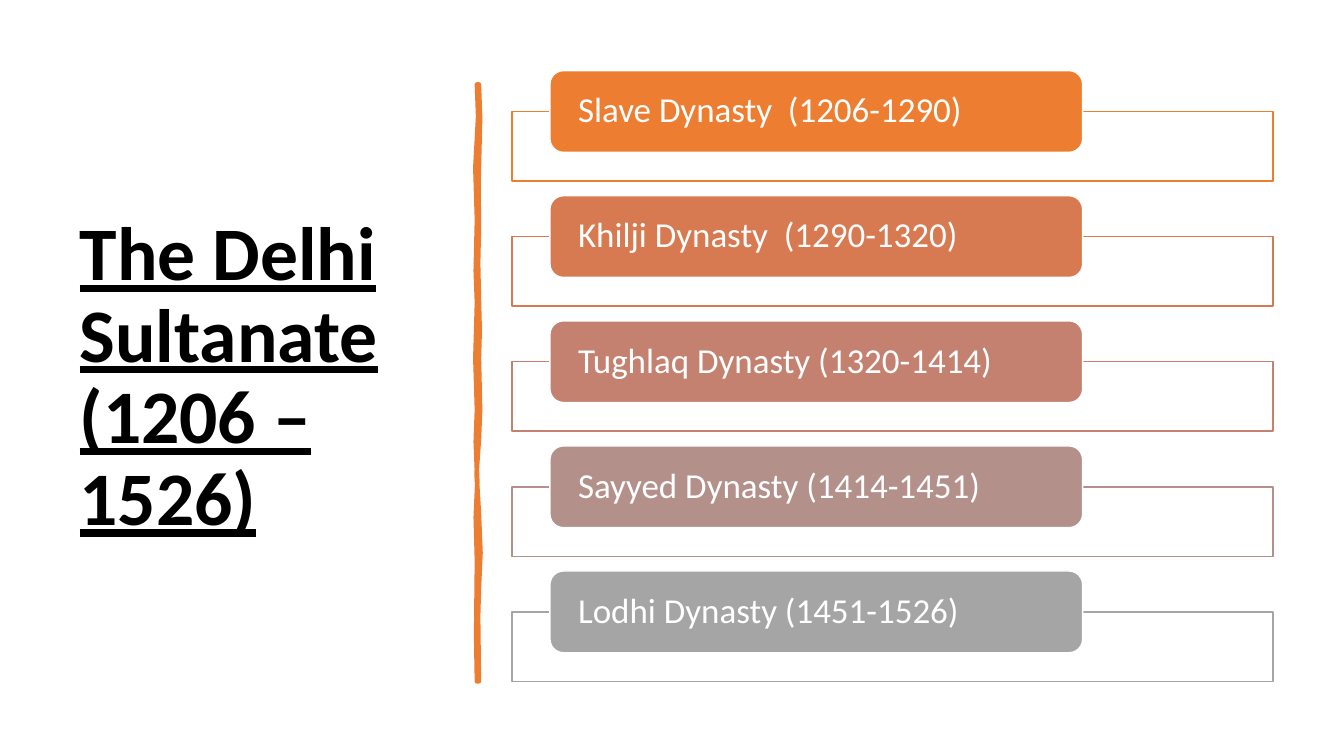
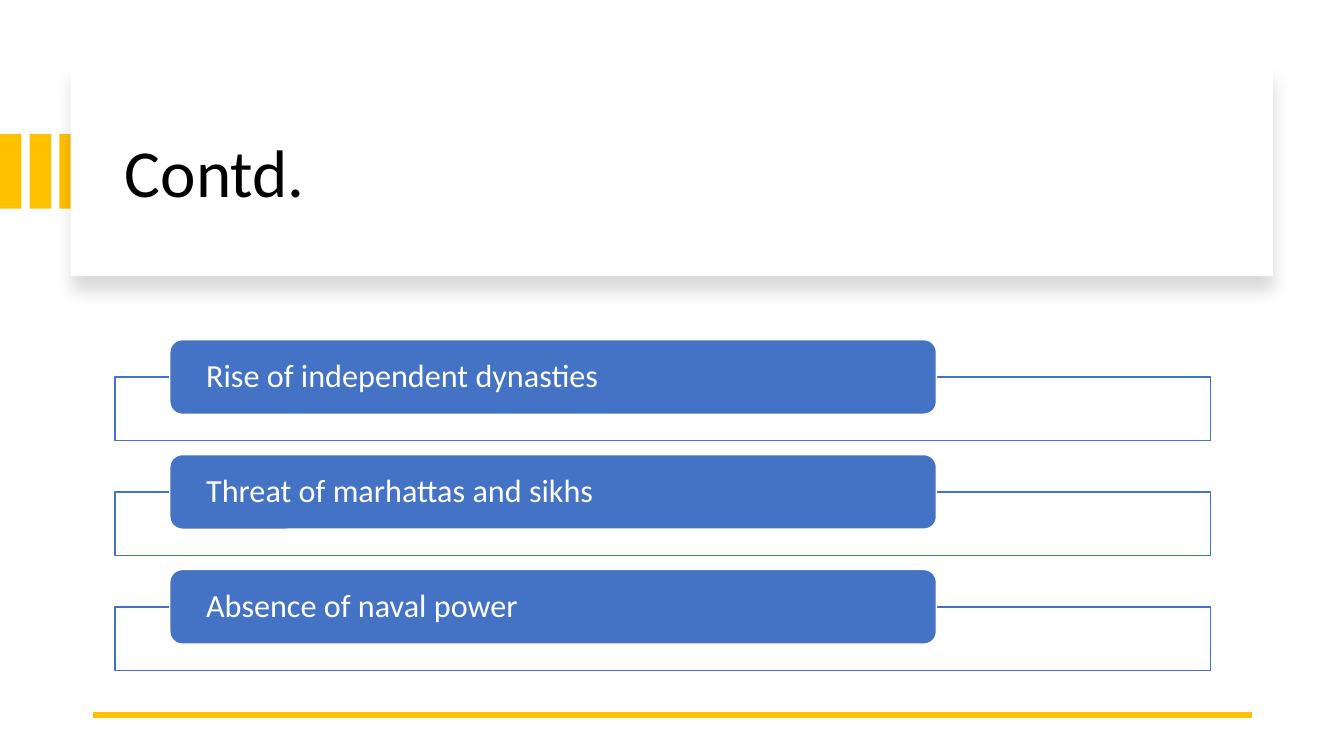
from dataclasses import dataclass

from lxml import etree
from pptx import Presentation
from pptx import util as u
from pptx.dml.color import RGBColor
from pptx.enum import shapes, text
from pptx.oxml import ns


@dataclass(frozen=True)
class Theme:
    font: str = "Calibri"
    ink: str = "000000"
    paper: str = "FFFFFF"
    orange: str = "ED7D31"
    gold: str = "FFC000"
    blue: str = "4472C4"
    dynasty_colours: tuple = ("ED7D31", "D87A51", "C48170", "B4908B", "A5A5A5")
    side_title: int = 54
    card_title: int = 48
    dynasty_label: int = 25
    cause_label: int = 23
    hairline: float = 1
    brush_line: float = 3.25
    rule_line: float = 4.5
    line_spacing: float = 0.9


THEME = Theme()

DYNASTIES = (
    "Slave Dynasty  (1206-1290)",
    "Khilji Dynasty  (1290-1320)",
    "Tughlaq Dynasty (1320-1414)",
    "Sayyed Dynasty (1414-1451)",
    "Lodhi Dynasty (1451-1526)",
)
CAUSES = (
    "Rise of independent dynasties",
    "Threat of marhattas and sikhs",
    "Absence of naval power",
)

BRUSH_RIGHT = (
    (0.13, 0), (0.16, 0.85), (0.12, 2.5), (0.13, 3.6), (0.11, 4.5), (0.13, 5.4),
    (0.15, 6.2), (0.13, 6.9), (0.16, 8.2), (0.13, 8.95), (0.07, 9.8), (0.13, 10.8),
    (0.17, 11.8), (0.13, 12.7), (0.11, 13.4), (0.13, 15.04),
)
BRUSH_LEFT = (
    (0.08, 15.04), (0.06, 13.9), (0.08, 12), (0.05, 10.9), (0.09, 10), (0.05, 9),
    (0.08, 8.2), (0.04, 6.9), (0.08, 5.5), (0.05, 4.7), (0.08, 3.4), (0.04, 2.1),
    (0.11, 0.8), (0.08, 0),
)


def paint(shape, fill, line=None, weight=THEME.hairline):
    shape.shadow.inherit = False
    shape.fill.solid()
    shape.fill.fore_color.rgb = RGBColor.from_string(fill)
    if line:
        shape.line.color.rgb = RGBColor.from_string(line)
        shape.line.width = u.Pt(weight)
    else:
        shape.line.fill.background()


def add_block(slide, box, fill, line=None, kind=shapes.MSO_SHAPE.RECTANGLE):
    block = slide.shapes.add_shape(kind, *map(u.Cm, box))
    paint(block, fill, line)
    return block


def write(shape, words, size, colour=THEME.ink, bold=False, underline=False,
          inset_x=0.25, inset_y=0.13):
    frame = shape.text_frame
    frame.word_wrap = True
    frame.vertical_anchor = text.MSO_ANCHOR.MIDDLE
    frame.margin_left = frame.margin_right = u.Cm(inset_x)
    frame.margin_top = frame.margin_bottom = u.Cm(inset_y)
    paragraph = frame.paragraphs[0]
    paragraph.alignment = text.PP_ALIGN.LEFT
    paragraph.line_spacing = THEME.line_spacing
    run = paragraph.add_run()
    run.text = words
    run.font.name = THEME.font
    run.font.size = u.Pt(size)
    run.font.bold = bold
    run.font.underline = underline
    run.font.color.rgb = RGBColor.from_string(colour)


def add_title(slide, box, words, size, **style):
    write(slide.shapes.add_textbox(*map(u.Cm, box)), words, size, **style)


def add_label_list(slide, box, labels, colours, size, label_height):
    left, top, width, height = box
    frame_height = 0.85 * label_height
    row_height = label_height / 2 + frame_height
    pitch = (height - row_height) / (len(labels) - 1)
    for index, (label, colour) in enumerate(zip(labels, colours)):
        row_top = top + index * pitch
        add_block(slide, (left, row_top + label_height / 2, width, frame_height),
                  THEME.paper, colour)
        tab = add_block(slide,
                        (left + 0.05 * width, row_top, 0.7 * width, label_height),
                        colour, THEME.paper, shapes.MSO_SHAPE.ROUNDED_RECTANGLE)
        write(tab, label, size, colour=THEME.paper,
              inset_x=0.0265 * width + 0.05 * label_height, inset_y=0)


def add_brush_stroke(slide, left, top):
    outline = [(u.Cm(left + x), u.Cm(top + y)) for x, y in BRUSH_RIGHT + BRUSH_LEFT]
    builder = slide.shapes.build_freeform(*outline[0])
    builder.add_line_segments(outline[1:], close=True)
    stroke = builder.convert_to_shape()
    paint(stroke, THEME.orange, THEME.orange, THEME.brush_line)
    etree.SubElement(stroke.line._get_or_add_ln(), ns.qn("a:round"))


def add_soft_shadow(shape):
    effects = shape._element.spPr.find(ns.qn("a:effectLst"))
    shadow = etree.SubElement(effects, ns.qn("a:outerShdw"), blurRad=str(u.Pt(11)),
                              dist=str(u.Pt(10)), dir="5400000", algn="t",
                              rotWithShape="0")
    colour = etree.SubElement(shadow, ns.qn("a:srgbClr"), val=THEME.ink)
    etree.SubElement(colour, ns.qn("a:alpha"), val="15000")


def add_title_card(slide, box, words):
    left, top, width, height = box
    for index in range(3):
        add_block(slide, (index * 0.75, top + 1.68, 0.54, 1.88), THEME.gold)
    add_soft_shadow(add_block(slide, box, THEME.paper))
    add_title(slide, (left + 1.12, top + 0.56, width - 2.7, height - 0.94),
              words, THEME.card_title)


def add_bottom_rule(slide, left, right, y):
    rule = slide.shapes.add_connector(shapes.MSO_CONNECTOR.STRAIGHT,
                                      u.Cm(left), u.Cm(y), u.Cm(right), u.Cm(y))
    rule.line.color.rgb = RGBColor.from_string(THEME.gold)
    rule.line.width = u.Pt(THEME.rule_line)
    etree.SubElement(rule._element.spPr, ns.qn("a:effectLst"))


def build_dynasties(slide):
    add_title(slide, (1.76, 1.78, 9.5, 15.52), "The Delhi Sultanate (1206 – 1526)",
              THEME.side_title, bold=True, underline=True)
    add_brush_stroke(slide, 11.94, 2.13)
    add_label_list(slide, (12.9, 1.78, 19.18, 15.39), DYNASTIES,
                   THEME.dynasty_colours, THEME.dynasty_label, 2.06)


def build_causes(slide):
    add_title_card(slide, (1.78, 1.7, 30.3, 5.26), "Contd.")
    add_label_list(slide, (2.9, 8.56, 27.6, 8.33), CAUSES,
                   [THEME.blue] * len(CAUSES), THEME.cause_label, 1.88)
    add_bottom_rule(slide, 2.34, 31.55, 18.01)


def main():
    deck = Presentation()
    deck.slide_width, deck.slide_height = u.Cm(33.87), u.Cm(19.05)
    for build in (build_dynasties, build_causes):
        build(deck.slides.add_slide(deck.slide_layouts[6]))
    deck.save("out.pptx")


if __name__ == "__main__":
    main()
